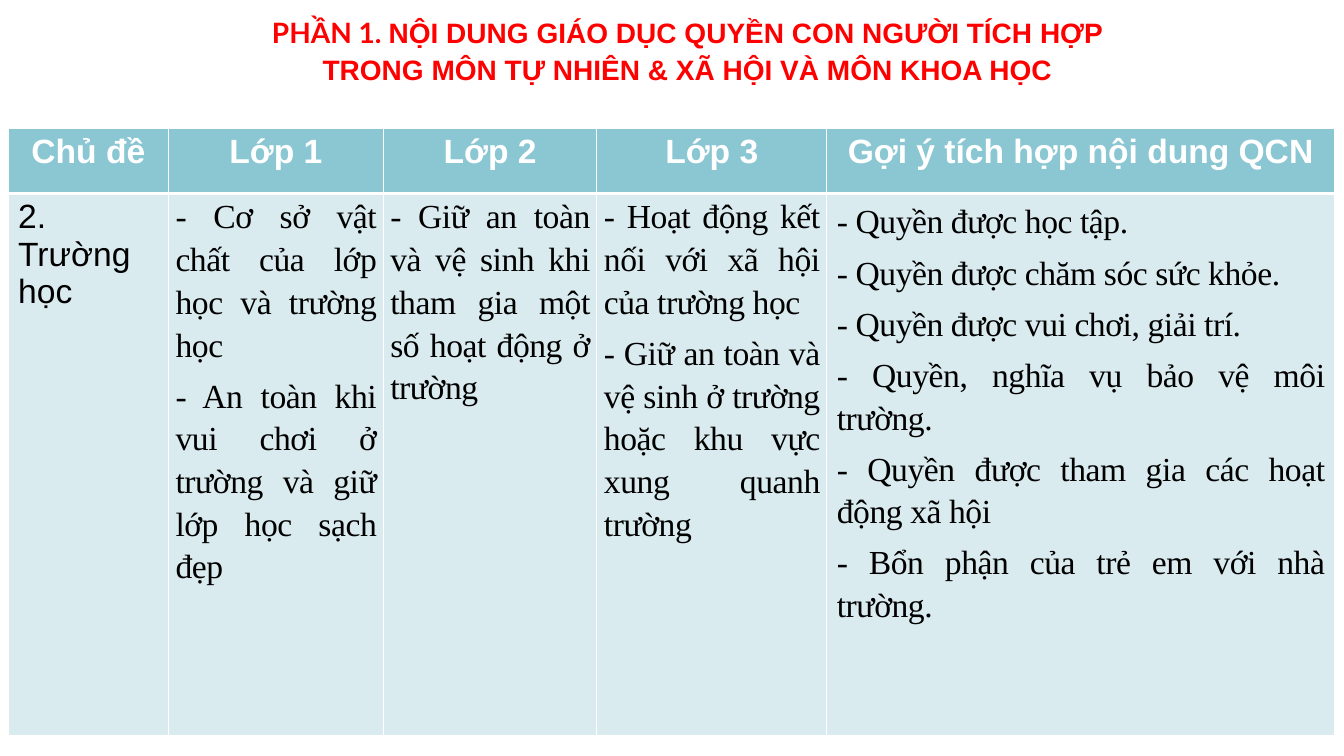
from lxml import etree
from pptx import Presentation
from pptx.dml.color import RGBColor
from pptx.enum.text import MSO_ANCHOR, MSO_AUTO_SIZE, PP_ALIGN
from pptx.oxml.ns import qn
from pptx.util import Pt

TOP = MSO_ANCHOR.TOP
NO_AUTOFIT = MSO_AUTO_SIZE.NONE
LEFT, CENTER, JUSTIFY = PP_ALIGN.LEFT, PP_ALIGN.CENTER, PP_ALIGN.JUSTIFY

TITLE_ONLY = 5
RED, WHITE, BLACK = "FF0000", "FFFFFF", "000000"
HEADER_FILL, BODY_FILL = "8AC7D3", "DAEBEF"

TITLE_RUNS = [
    ("PHẦN 1. ", "Lato"),
    ("NỘI DUNG GIÁO DỤC QUYỀN CON NGƯỜI TÍCH HỢP TRONG MÔN TỰ NHIÊN "
     "& XÃ HỘI VÀ MÔN KHOA HỌC", "Arial"),
]

HEADERS = ["Chủ đề", "Lớp 1", "Lớp 2", "Lớp 3", "Gợi ý tích hợp nội dung QCN"]
TOPIC = "2. Trường học"
GRADE_CONTENTS = [
    ["- Cơ sở vật chất của lớp học và trường học",
     "- An toàn khi vui chơi ở trường và giữ lớp học sạch đẹp"],
    ["- Giữ an toàn và vệ sinh khi tham gia một số hoạt động ở trường"],
    ["- Hoạt động kết nối với xã hội của trường học",
     "- Giữ an toàn và vệ sinh ở trường hoặc khu vực xung quanh trường"],
]
RIGHTS = [
    "- Quyền được học tập.",
    "- Quyền được chăm sóc sức khỏe.",
    "- Quyền được vui chơi, giải trí.",
    "- Quyền, nghĩa vụ bảo vệ môi trường.",
    "- Quyền được tham gia các hoạt động xã hội",
    "- Bổn phận của trẻ em với nhà trường.",
]

COLUMN_WIDTHS = [114.6, 153.4, 152.6, 164.2, 362.8]
ROW_HEIGHTS = [46.8, 387.4]

HEADER_FONT = {"name": "Arial", "size": Pt(24), "bold": True}
TOPIC_FONT = {"name": "Arial", "size": Pt(24), "bold": False}
CONTENT_FONT = {"name": "Times New Roman", "size": Pt(24), "bold": False}
TOPIC_LAYOUT = {"alignment": LEFT}
HEADER_LAYOUT = {"alignment": CENTER}
CONTENT_LAYOUT = {"alignment": JUSTIFY, "line_spacing": 1.15,
                  "space_before": Pt(3), "space_after": Pt(3)}
TIGHT_MARGINS = {"margin_left": Pt(5), "margin_right": Pt(5),
                 "margin_top": Pt(0), "margin_bottom": Pt(0)}


def rgb(hex_colour):
    return RGBColor.from_string(hex_colour)


def apply_format(target, values):
    for attribute, value in values.items():
        setattr(target, attribute, value)


def add_run(paragraph, text, font, colour, spacing=None):
    run = paragraph.add_run()
    run.text = text
    apply_format(run.font, font)
    run.font.color.rgb = rgb(colour)
    if spacing is not None:
        run._r.get_or_add_rPr().set("spc", str(round(spacing * 100)))


def set_borders(cell, widths):
    """Draw white cell borders; widths maps an edge to its points."""
    properties = cell._tc.get_or_add_tcPr()
    for edge, width in widths.items():
        line = etree.SubElement(properties, qn(f"a:ln{edge}"), w=str(Pt(width)))
        fill = etree.SubElement(line, qn("a:solidFill"))
        etree.SubElement(fill, qn("a:srgbClr"), val=WHITE)


def fill_cell(cell, texts, font, colour, layout, spacing=None):
    frame = cell.text_frame
    for index, text in enumerate(texts):
        paragraph = frame.add_paragraph() if index else frame.paragraphs[0]
        apply_format(paragraph, layout)
        if index == 0:
            paragraph.space_before = Pt(0)
        add_run(paragraph, text, font, colour, spacing)


def add_title(slide):
    title = slide.shapes.title
    apply_format(title, {"left": Pt(175.7), "top": Pt(5),
                         "width": Pt(630.7), "height": Pt(112.3)})
    apply_format(title.text_frame, {"word_wrap": True, "vertical_anchor": TOP,
                                    "auto_size": NO_AUTOFIT})
    heading = title.text_frame.paragraphs[0]
    apply_format(heading, {"alignment": CENTER, "line_spacing": 1.1})
    for text, font_name in TITLE_RUNS:
        font = {"name": font_name, "size": Pt(20), "bold": True}
        add_run(heading, text, font, RED)


def add_topic_table(slide):
    table = slide.shapes.add_table(
        len(ROW_HEIGHTS), len(COLUMN_WIDTHS), Pt(5.8), Pt(91.4),
        Pt(sum(COLUMN_WIDTHS)), Pt(sum(ROW_HEIGHTS))).table
    for column, width in zip(table.columns, COLUMN_WIDTHS):
        column.width = Pt(width)
    for row, height in zip(table.rows, ROW_HEIGHTS):
        row.height = Pt(height)

    # Fills and borders, with a thick rule under the header
    row_styles = [(HEADER_FILL, {"L": 1, "R": 1, "T": 1, "B": 3}),
                  (BODY_FILL, {"L": 1, "R": 1, "T": 3, "B": 1})]
    for row, (fill, borders) in zip(table.rows, row_styles):
        for cell in row.cells:
            set_borders(cell, borders)
            cell.fill.solid()
            cell.fill.fore_color.rgb = rgb(fill)

    # Header row
    for column, header in enumerate(HEADERS):
        fill_cell(table.cell(0, column), [header], HEADER_FONT, WHITE, HEADER_LAYOUT)

    # Topic, contents by grade, and rights to integrate
    fill_cell(table.cell(1, 0), [TOPIC], TOPIC_FONT, BLACK, TOPIC_LAYOUT)
    for column, content in enumerate(GRADE_CONTENTS + [RIGHTS], start=1):
        cell = table.cell(1, column)
        if content is not RIGHTS:
            apply_format(cell, TIGHT_MARGINS)
        fill_cell(cell, content, CONTENT_FONT, BLACK, CONTENT_LAYOUT, spacing=-0.3)


def main():
    presentation = Presentation()
    presentation.slide_width = Pt(960)
    presentation.slide_height = Pt(540)
    slide = presentation.slides.add_slide(presentation.slide_layouts[TITLE_ONLY])
    add_title(slide)
    add_topic_table(slide)
    presentation.save("out.pptx")


if __name__ == "__main__":
    main()
